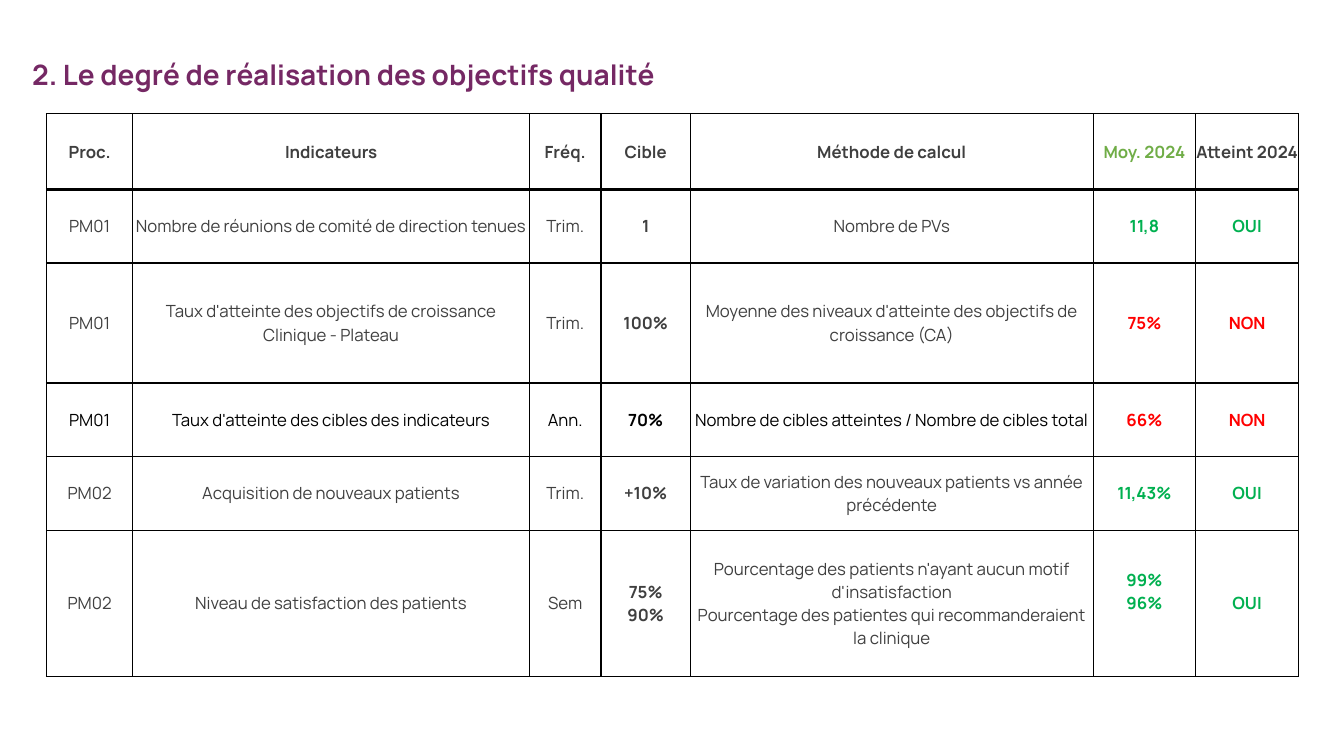
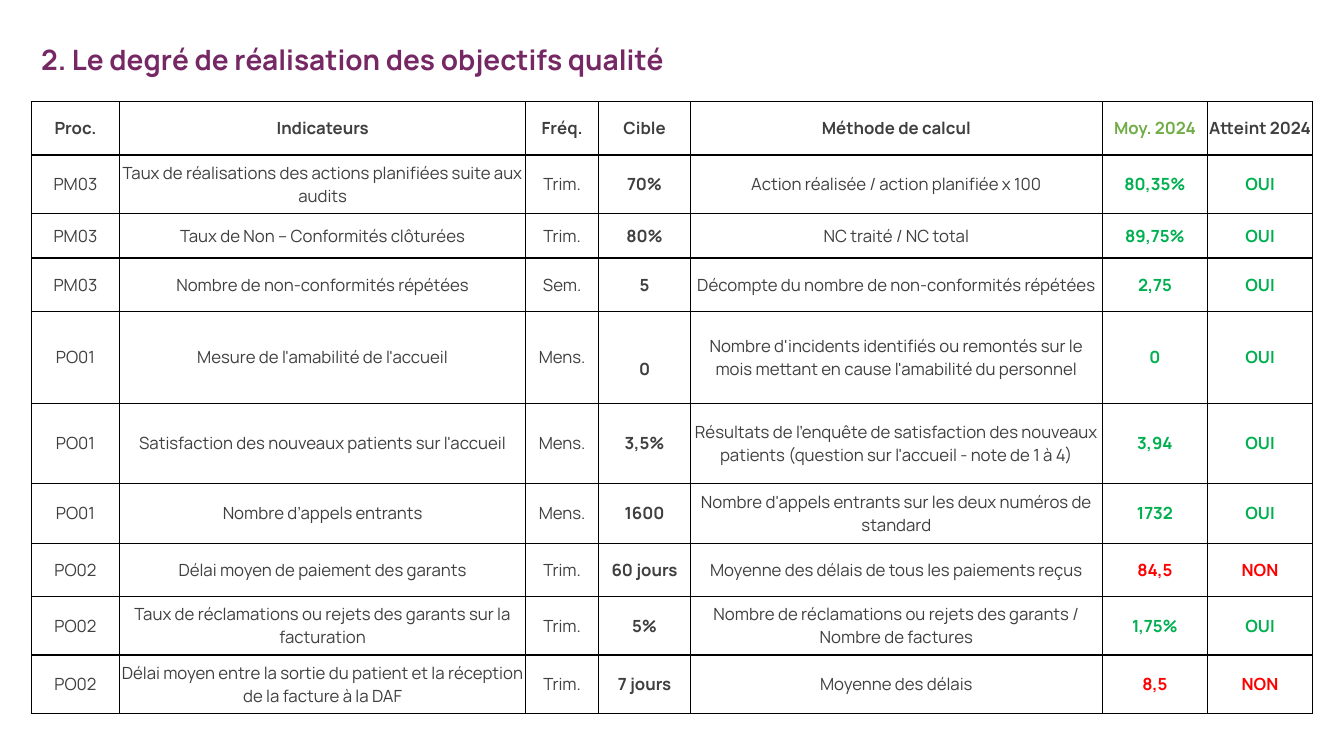
from lxml.etree import SubElement
from pptx import Presentation
from pptx.dml.color import RGBColor
from pptx.enum.text import MSO_ANCHOR as Anchor, PP_ALIGN as Align
from pptx.oxml.ns import qn
from pptx.util import Inches, Pt

# Shared look
WIDTH, HEIGHT = 13.33, 7.5
FONT = "Manrope"
PLUM = RGBColor(0x75, 0x28, 0x64)
GREY = RGBColor(0x3F, 0x3F, 0x3F)
BLACK = RGBColor(0x00, 0x00, 0x00)
WHITE = RGBColor(0xFF, 0xFF, 0xFF)
LIME = RGBColor(0x70, 0xAD, 0x47)
GREEN = RGBColor(0x00, 0xB0, 0x50)
RED = RGBColor(0xFF, 0x00, 0x00)

TITLE = "2. Le degré de réalisation des objectifs qualité"
HEADINGS = ("Proc.", "Indicateurs", "Fréq.", "Cible", "Méthode de calcul",
            "Moy. 2024", "Atteint 2024")
TARGET, AVERAGE, REACHED = 3, 5, 6
COLUMN_SHARES = (0.86, 3.94, 0.71, 0.89, 4, 1.02, 1.02)

# Indicators: one tuple per row, in the order of the headings
STEERING = [
    ("PM01", "Nombre de réunions de comité de direction tenues", "Trim.", "1",
     "Nombre de PVs", "11,8", "OUI"),
    ("PM01", "Taux d'atteinte des objectifs de croissance Clinique - Plateau", "Trim.", "100%",
     "Moyenne des niveaux d'atteinte des objectifs de croissance (CA)", "75%", "NON"),
    ("PM01", "Taux d'atteinte des cibles des indicateurs", "Ann.", "70%",
     "Nombre de cibles atteintes / Nombre de cibles total", "66%", "NON"),
    ("PM02", "Acquisition de nouveaux patients", "Trim.", "+10%",
     "Taux de variation des nouveaux patients vs année précédente", "11,43%", "OUI"),
    ("PM02", "Niveau de satisfaction des patients", "Sem", "75%\n90%",
     "Pourcentage des patients n'ayant aucun motif d'insatisfaction\n"
     "Pourcentage des patientes qui recommanderaient la clinique", "99%\n96%", "OUI"),
]
OPERATIONS = [
    ("PM03", "Taux de réalisations des actions planifiées suite aux audits", "Trim.", "70%",
     "Action réalisée / action planifiée x 100", "80,35%", "OUI"),
    ("PM03", "Taux de Non – Conformités clôturées", "Trim.", "80%",
     "NC traité / NC total", "89,75%", "OUI"),
    ("PM03", "Nombre de non-conformités répétées", "Sem.", "5",
     "Décompte du nombre de non-conformités répétées", "2,75", "OUI"),
    ("PO01", "Mesure de l'amabilité de l'accueil", "Mens.", "0",
     "Nombre d'incidents identifiés ou remontés sur le mois mettant en cause "
     "l'amabilité du personnel", "0", "OUI"),
    ("PO01", "Satisfaction des nouveaux patients sur l'accueil", "Mens.", "3,5%",
     "Résultats de l'enquête de satisfaction des nouveaux patients "
     "(question sur l'accueil - note de 1 à 4)", "3,94", "OUI"),
    ("PO01", "Nombre d’appels entrants", "Mens.", "1600",
     "Nombre d'appels entrants sur les deux numéros de standard", "1732", "OUI"),
    ("PO02", "Délai moyen de paiement des garants", "Trim.", "60 jours",
     "Moyenne des délais de tous les paiements reçus", "84,5", "NON"),
    ("PO02", "Taux de réclamations ou rejets des garants sur la facturation", "Trim.", "5%",
     "Nombre de réclamations ou rejets des garants / Nombre de factures", "1,75%", "OUI"),
    ("PO02", "Délai moyen entre la sortie du patient et la réception de la facture à la DAF",
     "Trim.", "7 jours", "Moyenne des délais", "8,5", "NON"),
]


def write(frame, text, *, size=12, color=GREY, bold=False, align=Align.CENTER):
    """Fill a text frame, one paragraph per line of text."""
    for number, line in enumerate(text.split("\n")):
        paragraph = frame.add_paragraph() if number else frame.paragraphs[0]
        paragraph.alignment = align
        run = paragraph.add_run()
        run.text = line
        run.font.name, run.font.size = FONT, Pt(size)
        run.font.bold, run.font.color.rgb = bold, color


def add_title(slide, left, top):
    box = slide.shapes.add_textbox(Inches(left), Inches(top), Inches(11.58), Inches(0.56))
    frame = box.text_frame
    frame.word_wrap = True
    frame.vertical_anchor = Anchor.BOTTOM
    write(frame, TITLE, size=20, color=PLUM, bold=True, align=Align.LEFT)


def draw_borders(cell, top, bottom):
    """Black borders, 1 pt at the sides and the given widths above and below."""
    properties = cell._tc.get_or_add_tcPr()
    for side, points in (("L", 1), ("R", 1), ("T", top), ("B", bottom)):
        line = SubElement(properties, qn(f"a:ln{side}"), w=str(Pt(points)))
        fill = SubElement(line, qn("a:solidFill"))
        SubElement(fill, qn("a:srgbClr"), val=str(BLACK))


def cell_format(row, column, reached, ink):
    """Colour and weight of a cell, by its place and the result of its row."""
    if row == 0:
        return {"color": LIME if column == AVERAGE else GREY, "bold": True}
    if column in (AVERAGE, REACHED):
        return {"color": GREEN if reached == "OUI" else RED, "bold": True}
    return {"color": ink, "bold": column == TARGET}


def add_indicators(slide, left, top, width, heights, indicators, black_rows=()):
    rows = [HEADINGS, *indicators]
    table = slide.shapes.add_table(len(rows), len(HEADINGS), Inches(left), Inches(top),
                                   Inches(width), Inches(sum(heights))).table
    table.first_row = table.horz_banding = False
    for column, share in zip(table.columns, COLUMN_SHARES):
        column.width = Inches(width * share / sum(COLUMN_SHARES))
    for r, (texts, height) in enumerate(zip(rows, heights)):
        table.rows[r].height = Inches(height)
        ink = BLACK if r in black_rows else GREY
        for c, text in enumerate(texts):
            cell = table.cell(r, c)
            cell.margin_left = cell.margin_right = cell.margin_top = cell.margin_bottom = 0
            cell.vertical_anchor = Anchor.MIDDLE
            draw_borders(cell, top=2 if r == 1 else 1, bottom=2 if r == 0 else 1)
            cell.fill.solid()
            cell.fill.fore_color.rgb = WHITE
            write(cell.text_frame, text, **cell_format(r, c, texts[REACHED], ink))
    return table


def main():
    deck = Presentation()
    deck.slide_width, deck.slide_height = Inches(WIDTH), Inches(HEIGHT)
    blank = deck.slide_layouts[6]

    # Steering processes
    slide = deck.slides.add_slide(blank)
    steering = add_indicators(slide, 0.46, 1.13, 12.42, (0.75, 0.73, 1.19, 0.73, 0.73, 1.45),
                              STEERING, black_rows=(3,))
    steering.cell(5, AVERAGE).margin_bottom = Inches(0.23)  # sits one line higher
    add_title(slide, 0.22, 0.39)

    # Operational processes
    slide = deck.slides.add_slide(blank)
    operations = add_indicators(slide, 0.31, 1.01, 12.71,
                                (0.53, 0.58, 0.44, 0.53, 0.91, 0.8, 0.59, 0.53, 0.58, 0.58),
                                OPERATIONS)
    operations.cell(4, TARGET).margin_top = Inches(0.23)  # sits one line lower
    add_title(slide, 0.31, 0.24)

    deck.save("out.pptx")


if __name__ == "__main__":
    main()
